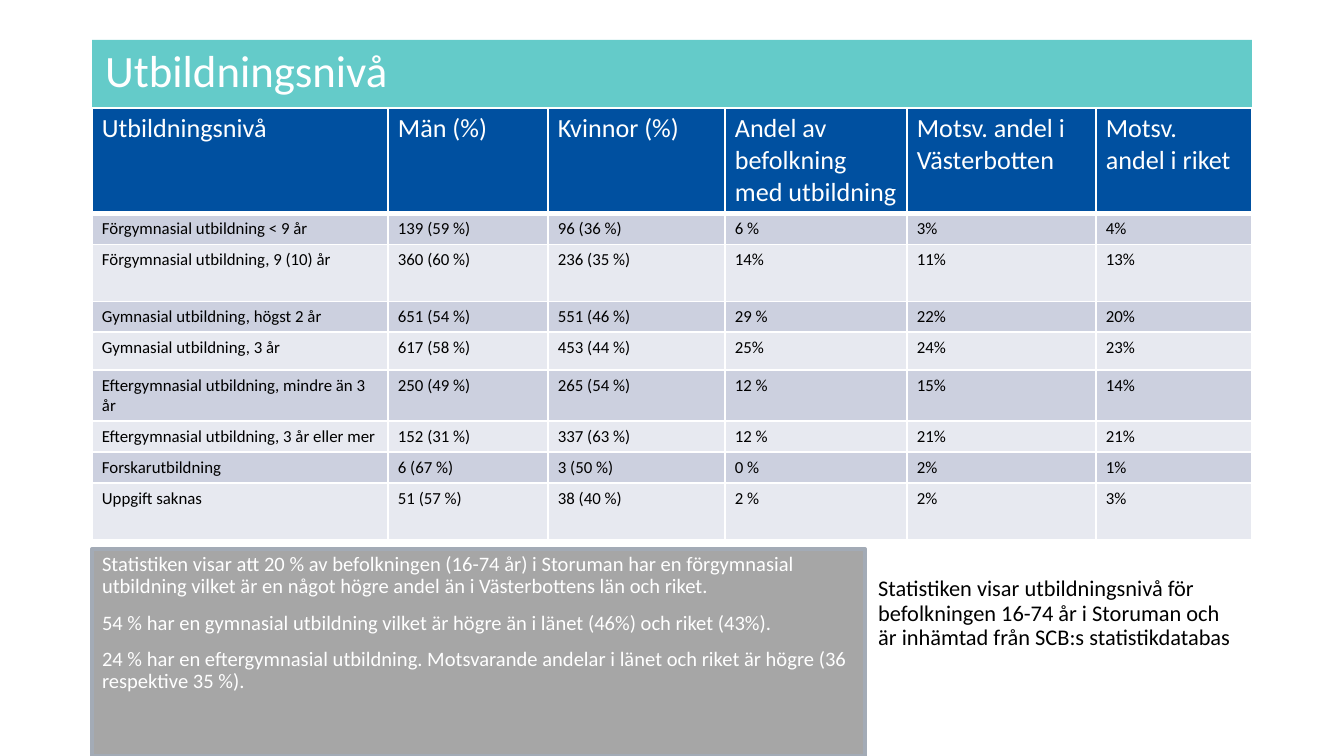
from lxml import etree
from pptx import Presentation
from pptx.dml.color import RGBColor
from pptx.enum.shapes import MSO_SHAPE
from pptx.enum.text import MSO_ANCHOR, PP_ALIGN
from pptx.oxml.ns import qn
from pptx.util import Emu, Pt

RECTANGLE = MSO_SHAPE.RECTANGLE
TOP, MIDDLE = MSO_ANCHOR.TOP, MSO_ANCHOR.MIDDLE
LEFT = PP_ALIGN.LEFT

EMU_PER_PX = 914400 / 134.4
FONT = "Calibri"

WHITE = RGBColor(0xFF, 0xFF, 0xFF)
BLACK = RGBColor(0x00, 0x00, 0x00)
TEAL = RGBColor(0x64, 0xCB, 0xC9)
HEADER_BLUE = RGBColor(0x00, 0x50, 0xA0)
BANDS = (RGBColor(0xCC, 0xD0, 0xDF), RGBColor(0xE7, 0xE9, 0xF0))
GREY = RGBColor(0xA6, 0xA6, 0xA6)
GREY_LINE = RGBColor(0xA3, 0xAB, 0xB6)

COLUMN_WIDTHS = (296, 160, 177, 182, 189, 156)
ROW_HEIGHTS = (105, 31, 57, 31, 38, 51, 31, 31, 57)
ROWS = (
    ("Utbildningsnivå", "Män (%)", "Kvinnor (%)", "Andel av befolkning med utbildning",
     "Motsv. andel i Västerbotten", "Motsv. andel i riket"),
    ("Förgymnasial utbildning < 9 år", "139 (59 %)", "96 (36 %)", "6 %", "3%", "4%"),
    ("Förgymnasial utbildning, 9 (10) år", "360 (60 %)", "236 (35 %)", "14%", "11%", "13%"),
    ("Gymnasial utbildning, högst 2 år", "651 (54 %)", "551 (46 %)", "29 %", "22%", "20%"),
    ("Gymnasial utbildning, 3 år", "617 (58 %)", "453 (44 %)", "25%", "24%", "23%"),
    ("Eftergymnasial utbildning, mindre än 3 år", "250 (49 %)", "265 (54 %)", "12 %", "15%", "14%"),
    ("Eftergymnasial utbildning, 3 år eller mer", "152 (31 %)", "337 (63 %)", "12 %", "21%", "21%"),
    ("Forskarutbildning", "6 (67 %)", "3 (50 %)", "0 %", "2%", "1%"),
    ("Uppgift saknas", "51 (57 %)", "38 (40 %)", "2 %", "2%", "3%"),
)
SUMMARY = (
    "Statistiken visar att 20 % av befolkningen (16-74 år) i Storuman har en förgymnasial "
    "utbildning vilket är en något högre andel än i Västerbottens län och riket.",
    "54 % har en gymnasial utbildning vilket är högre än i länet (46%) och riket (43%).",
    "24 % har en eftergymnasial utbildning. Motsvarande andelar i länet och riket är högre "
    "(36 respektive 35 %).",
)
SOURCE_NOTE = (
    "Statistiken visar utbildningsnivå för befolkningen 16-74 år i Storuman och "
    "är inhämtad från SCB:s statistikdatabas"
)


def px(length):
    return Emu(round(length * EMU_PER_PX))


def write_text(text_frame, paragraphs, size, color, line_spacing=1.0, space_before=0):
    text_frame.word_wrap = True
    text_frame.text = "\n".join(paragraphs)
    for index, paragraph in enumerate(text_frame.paragraphs):
        paragraph.alignment = LEFT
        paragraph.line_spacing = line_spacing
        paragraph.space_before = Pt(space_before if index else 0)
        for run in paragraph.runs:
            run.font.name = FONT
            run.font.size = Pt(size)
            run.font.color.rgb = color


def set_insets(box, horizontal, vertical):
    box.margin_left = box.margin_right = px(horizontal)
    box.margin_top = box.margin_bottom = px(vertical)


def add_panel(slide, left, top, width, height, fill, anchor, line=None):
    shape = slide.shapes.add_shape(RECTANGLE, px(left), px(top), px(width), px(height))
    shape.shadow.inherit = False
    shape.fill.solid()
    shape.fill.fore_color.rgb = fill
    if line is None:
        shape.line.fill.background()
    else:
        shape.line.color.rgb = line
        shape.line.width = Pt(2)
    shape.text_frame.vertical_anchor = anchor
    return shape.text_frame


def set_borders(cell, bottom_width):
    properties = cell._tc.get_or_add_tcPr()
    for side, width in (("lnL", 1), ("lnR", 1), ("lnT", 1), ("lnB", bottom_width)):
        border = etree.SubElement(properties, qn(f"a:{side}"), w=str(Pt(width)))
        fill = etree.SubElement(border, qn("a:solidFill"))
        etree.SubElement(fill, qn("a:srgbClr"), val=str(WHITE))


def add_education_table(slide, left, top):
    table = slide.shapes.add_table(
        len(ROWS), len(COLUMN_WIDTHS), px(left), px(top),
        px(sum(COLUMN_WIDTHS)), px(sum(ROW_HEIGHTS))).table
    for column, width in zip(table.columns, COLUMN_WIDTHS):
        column.width = px(width)
    for row_index, (row, height, values) in enumerate(zip(table.rows, ROW_HEIGHTS, ROWS)):
        row.height = px(height)
        is_header = row_index == 0
        fill = HEADER_BLUE if is_header else BANDS[(row_index - 1) % 2]
        for cell, value in zip(row.cells, values):
            set_insets(cell, 10, 5)
            set_borders(cell, 3 if is_header else 1)
            cell.fill.solid()
            cell.fill.fore_color.rgb = fill
            write_text(cell.text_frame, [value], 14 if is_header else 9,
                       WHITE if is_header else BLACK)


def main():
    presentation = Presentation()
    presentation.slide_width, presentation.slide_height = px(1344), px(756)
    slide = presentation.slides.add_slide(presentation.slide_layouts[6])

    # Title band
    title = add_panel(slide, 92, 40, 1160, 67, TEAL, MIDDLE)
    write_text(title, ["Utbildningsnivå"], 24, WHITE, line_spacing=0.9)

    # Education levels
    add_education_table(slide, 92, 108)

    # Summary panel
    summary = add_panel(slide, 92, 549, 773, 207, GREY, TOP, line=GREY_LINE)
    set_insets(summary, 10, 5)
    write_text(summary, SUMMARY, 11, WHITE, line_spacing=0.9, space_before=7.5)

    # Source note
    note = slide.shapes.add_textbox(px(865), px(571), px(388), px(145)).text_frame
    write_text(note, [SOURCE_NOTE], 12, BLACK, line_spacing=0.9)

    presentation.save("out.pptx")


if __name__ == "__main__":
    main()
